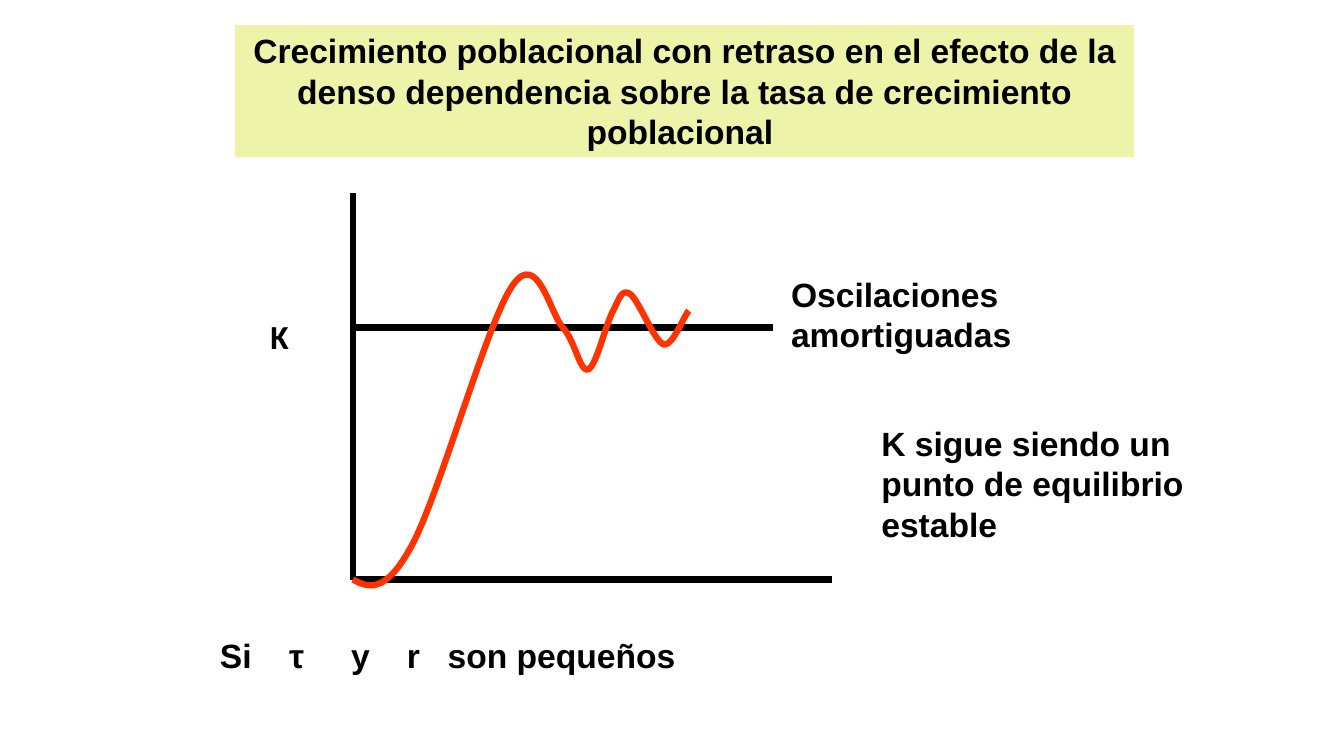
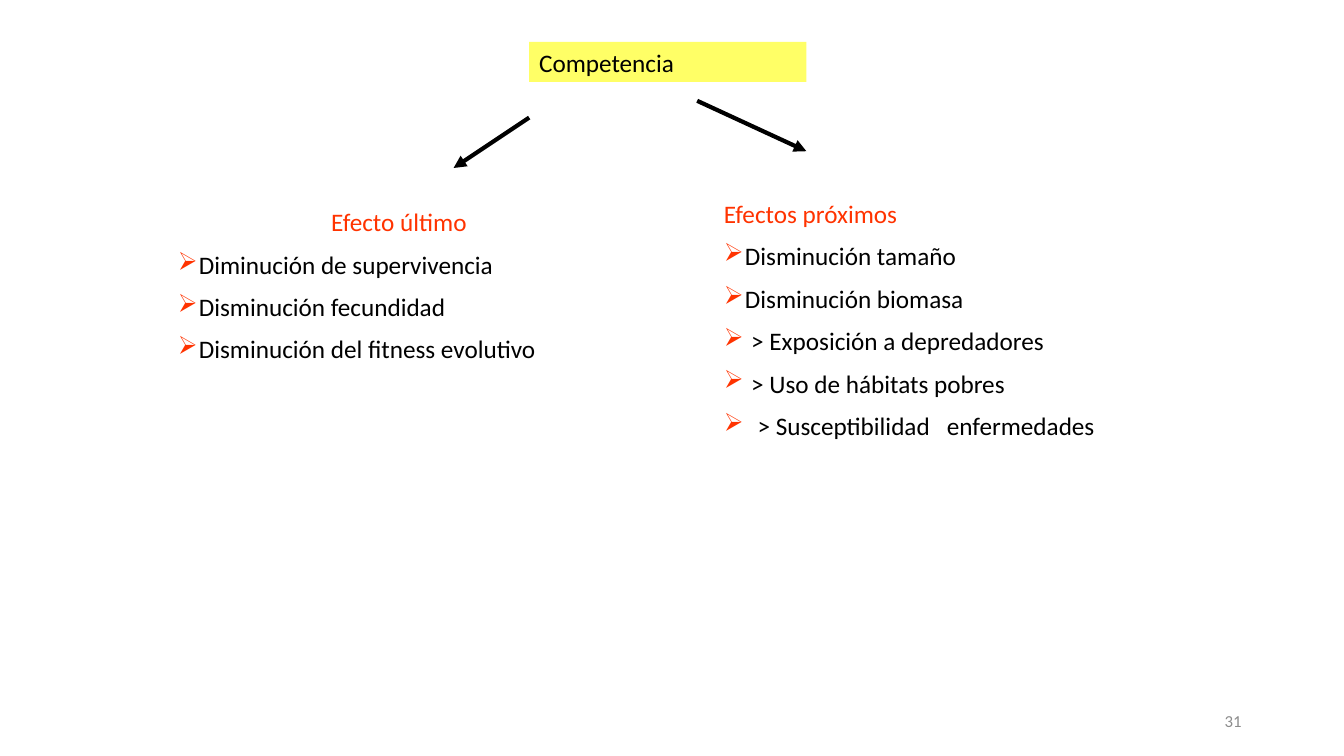
from lxml.etree import SubElement
from pptx import Presentation
from pptx.dml.color import RGBColor
from pptx.enum.shapes import MSO_CONNECTOR as Connector
from pptx.enum.text import MSO_ANCHOR as Anchor, PP_ALIGN as Align
from pptx.oxml.ns import qn
from pptx.util import Pt

EMU_PER_PX = 9525
COLORS = {
    "black": "000000",
    "white": "FFFFFF",
    "red": "FF3300",
    "lime": "EDF4AA",
    "yellow": "FFFF66",
    "gray": "8C8C8C",
}
AXIS_WIDTH = 4.5
ARROW_WIDTH = 3
ITEM_SPACING = 8.7
ITEM_INDENT = 20
CURVE_STEPS = 16
CURVE_START = (336, 552)
CURVE_SEGMENTS = [
    ((351, 560), (367, 566), (392, 520)),
    ((418, 473), (464, 306), (488, 272)),
    ((512, 237), (524, 299), (536, 312)),
    ((548, 325), (552, 354), (560, 352)),
    ((568, 349), (577, 308), (584, 296)),
    ((590, 284), (592, 275), (600, 280)),
    ((608, 285), (623, 325), (632, 328)),
    ((641, 330), (651, 301), (656, 296)),
]


def px(value):
    return round(value * EMU_PER_PX)


def color(name):
    return RGBColor.from_string(COLORS[name])


def set_font(font, size, name, color_name="black", bold=False):
    font.size = Pt(size)
    font.name = name
    font.bold = bold
    font.color.rgb = color(color_name)


def add_box(shapes, box, fill=None):
    shape = shapes.add_textbox(*map(px, box))
    shape.text_frame.word_wrap = True
    if fill:
        shape.fill.solid()
        shape.fill.fore_color.rgb = color(fill)
    return shape


def add_label(shapes, box, text, size=24, font="Arial", bold=True,
              fill=None, color_name="black", align=Align.LEFT):
    shape = add_box(shapes, box, fill)
    paragraph = shape.text_frame.paragraphs[0]
    paragraph.text = text
    paragraph.alignment = align
    set_font(paragraph.font, size, font, color_name, bold)
    return shape


def add_tab_stops(paragraph, positions):
    tab_list = SubElement(paragraph._p.get_or_add_pPr(), qn("a:tabLst"))
    for position in positions:
        SubElement(tab_list, qn("a:tab"), pos=str(px(position)), algn="l")


def add_bullet(paragraph, indent):
    properties = paragraph._p.get_or_add_pPr()
    properties.set("marL", str(px(indent)))
    properties.set("indent", str(-px(indent)))
    bullet_color = SubElement(properties, qn("a:buClr"))
    SubElement(bullet_color, qn("a:srgbClr"), val=COLORS["red"])
    SubElement(properties, qn("a:buChar"), char="➢")


def add_wide_space(paragraph, spacing):
    run = paragraph.add_run()
    run.text = " "
    run.font._element.set("spc", str(round(spacing * 100)))


def add_effect_list(shapes, box, heading, items, align=Align.LEFT):
    shape = add_label(shapes, box, heading, 18, "Calibri", False,
                      "white", "red", align)
    for text, indent in items:
        paragraph = shape.text_frame.add_paragraph()
        paragraph.space_before = Pt(ITEM_SPACING)
        set_font(paragraph.font, 18, "Calibri")
        add_bullet(paragraph, indent)
        first, *rest = text.split("\t")
        paragraph.add_run().text = first
        for part in rest:
            add_wide_space(paragraph, 8)
            paragraph.add_run().text = part


def add_line(shapes, start, end, width, arrow=False):
    connector = shapes.add_connector(
        Connector.STRAIGHT, *map(px, start + end))
    connector.line.width = Pt(width)
    connector.line.color.rgb = color("black")
    if arrow:
        SubElement(connector.line._get_or_add_ln(), qn("a:tailEnd"),
                   type="triangle")
    SubElement(connector._element.spPr, qn("a:effectLst"))


def curve_points(start, segments):
    for control1, control2, end in segments:
        for step in range(1, CURVE_STEPS + 1):
            t = step / CURVE_STEPS
            weights = ((1 - t) ** 3, 3 * t * (1 - t) ** 2,
                       3 * t ** 2 * (1 - t), t ** 3)
            knots = (start, control1, control2, end)
            yield tuple(px(sum(w * knot[axis]
                               for w, knot in zip(weights, knots)))
                        for axis in (0, 1))
        start = end


def add_curve(shapes, start, segments):
    builder = shapes.build_freeform(*map(px, start))
    builder.add_line_segments(curve_points(start, segments), close=False)
    curve = builder.convert_to_shape()
    curve.shadow.inherit = False
    curve.fill.background()
    curve.line.width = Pt(AXIS_WIDTH)
    curve.line.color.rgb = color("red")


def add_growth_plot(slide):
    shapes = slide.shapes.add_group_shape().shapes
    for start, end in [((336, 184), (336, 552)),
                       ((336, 552), (792, 552)),
                       ((336, 312), (736, 312))]:
        add_line(shapes, start, end, AXIS_WIDTH)
    add_curve(shapes, CURVE_START, CURVE_SEGMENTS)
    add_label(shapes, (248, 296, 64, 48), "K", font="Calibri")


def build_growth_slide(slide):
    shapes = slide.shapes
    condition = add_label(shapes, (200, 600, 480, 48),
                          "Si\tτ\ty\tr\tson pequeños", fill="white")
    add_tab_stops(condition.text_frame.paragraphs[0], (66, 125, 178, 217))
    add_label(shapes, (744, 256, 240, 87), "Oscilaciones amortiguadas",
              fill="white")
    add_label(shapes, (224, 24, 856, 126),
              "Crecimiento poblacional con retraso en el efecto de la denso "
              "dependencia sobre la tasa de crecimiento poblacional ",
              fill="lime", align=Align.CENTER)
    add_growth_plot(slide)
    add_label(shapes, (830, 398, 384, 126),
              "K sigue siendo un punto de equilibrio estable", fill="white")


def build_competition_slide(slide):
    shapes = slide.shapes
    number = add_label(shapes, (904, 667, 288, 38), "31", 12, "Calibri",
                       False, color_name="gray", align=Align.RIGHT)
    number.text_frame.vertical_anchor = Anchor.MIDDLE
    add_effect_list(shapes, (160, 192, 440, 170), "Efecto último", [
        ("Diminución de supervivencia", ITEM_INDENT),
        ("Disminución fecundidad", ITEM_INDENT),
        ("Disminución del fitness evolutivo", ITEM_INDENT),
    ], Align.CENTER)
    add_effect_list(shapes, (680, 184, 408, 257), "Efectos próximos", [
        ("Disminución tamaño", ITEM_INDENT),
        ("Disminución biomasa", ITEM_INDENT),
        ("> Exposición a depredadores", ITEM_INDENT + 6),
        ("> Uso de hábitats pobres", ITEM_INDENT + 6),
        ("> Susceptibilidad\tenfermedades", ITEM_INDENT + 12),
    ])
    add_label(shapes, (504, 40, 264, 38), "Competencia", 18, "Calibri",
              False, "yellow")
    add_line(shapes, (504, 112), (432, 160), ARROW_WIDTH, arrow=True)
    add_line(shapes, (664, 96), (768, 144), ARROW_WIDTH, arrow=True)


def main():
    presentation = Presentation()
    presentation.slide_width = px(1280)
    presentation.slide_height = px(720)
    blank = presentation.slide_layouts[6]
    for build in (build_growth_slide, build_competition_slide):
        build(presentation.slides.add_slide(blank))
    presentation.save("out.pptx")


if __name__ == "__main__":
    main()
